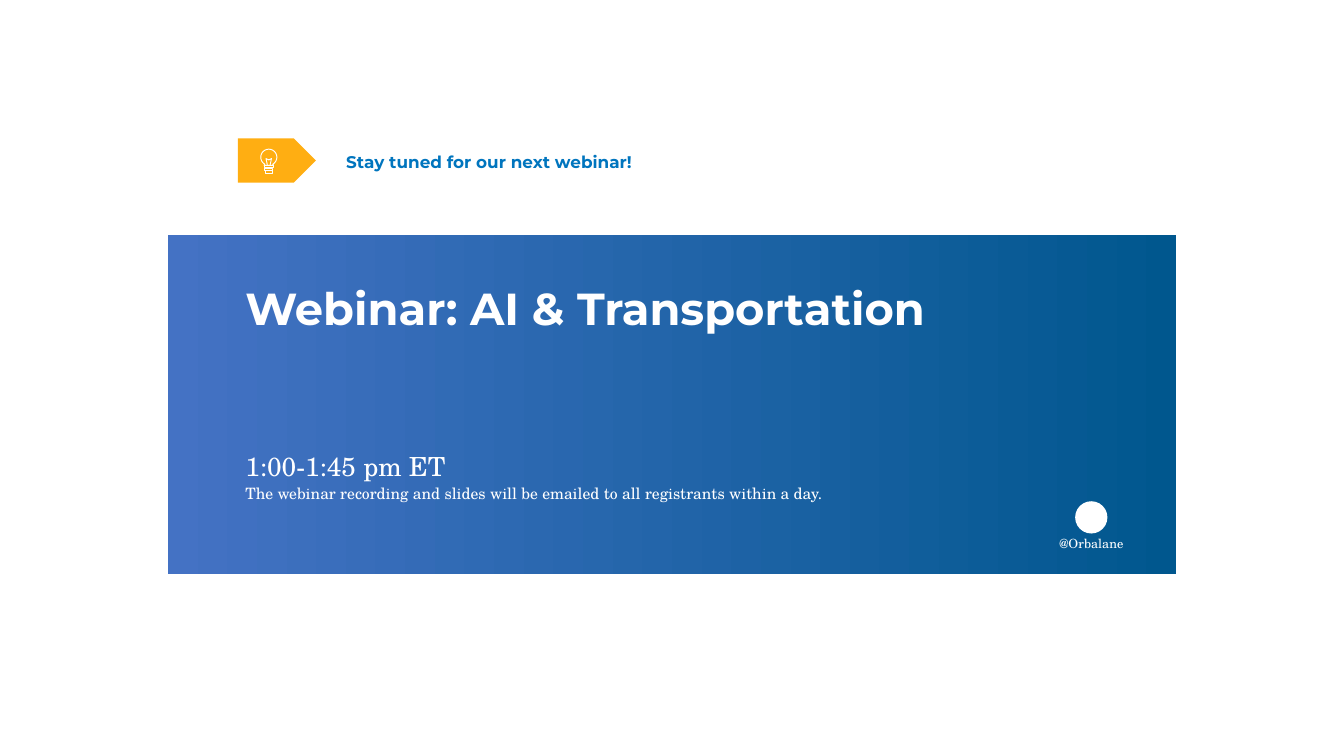
from math import cos, radians, sin

from pptx import Presentation
from pptx.dml.color import RGBColor
from pptx.enum.shapes import MSO_SHAPE
from pptx.enum.text import PP_ALIGN
from pptx.util import Inches, Pt

RECT, OVAL, TAG = MSO_SHAPE.RECTANGLE, MSO_SHAPE.OVAL, MSO_SHAPE.PENTAGON
LEFT, MID = PP_ALIGN.LEFT, PP_ALIGN.CENTER

COLORS = {"start": "4472C4", "end": "00578E", "tag": "FFAE12",
          "white": "FFFFFF", "blue": "0075BE"}
HEAD, BODY = "Montserrat", "TeX Gyre Schola"

# Content: box, alignment, line spacing, font, bold, colour, (text, size) lines
TEXTS = [
    ((1.77, 2.06, 6.23, 1.27), LEFT, 1, HEAD, True, "white",
     [("Webinar: AI & Transportation", 24)]),
    ((1.77, 3.29, 5.81, 0.48), LEFT, 1.13, BODY, False, "white",
     [("1:00-1:45 pm ET", 14.1),
      ("The webinar recording and slides will be emailed to all "
       "registrants within a day.", 8.4)]),
    ((7.72, 3.96, 0.8, 0.17), MID, 1, BODY, False, "white",
     [("@Orbalane", 6.8)]),
    ((2.52, 1.08, 2.29, 0.23), LEFT, 1.13, HEAD, True, "blue",
     [("Stay tuned for our next webinar!", 9)]),
]
PANEL = (1.25, 1.75, 7.5, 2.52)
BADGE = (8, 3.73, 0.24, 0.24)
ARROW = (1.77, 1.03, 0.58, 0.33)

# Light bulb: glass, filament and stacked base rings
BULB_X, BULB_Y, BULB_R = 2.0, 1.17, 0.06
NECK = 1.23
WIRE = [(-0.01, NECK), (-0.02, 1.18), (0, 1.19), (0.02, 1.18), (0.01, NECK)]
RINGS = [0.07, 0.06, 0.05]
STEP = 0.02

prs = Presentation()
prs.slide_width, prs.slide_height = Inches(10), Inches(10 * 9 / 16)
slide = prs.slides.add_slide(prs.slide_layouts[6])
shapes = slide.shapes


def rgb(name):
    return RGBColor.from_string(COLORS[name])


def add(kind, box, color):
    part = shapes.add_shape(kind, *map(Inches, box))
    part.shadow.inherit = False
    part.fill.solid()
    part.fill.fore_color.rgb = rgb(color)
    part.line.fill.background()
    return part


def trace(part):
    part.shadow.inherit = False
    part.fill.background()
    part.line.color.rgb = rgb("white")
    part.line.width = Pt(0.5)


def draw(points, close):
    first, *rest = [(Inches(x), Inches(y)) for x, y in points]
    path = shapes.build_freeform(*first)
    path.add_line_segments(rest, close=close)
    trace(path.convert_to_shape())


def write(box, align, space, font, bold, color, lines):
    frame = shapes.add_textbox(*map(Inches, box)).text_frame
    form = {"word_wrap": True,
            "margin_left": Pt(4), "margin_right": Pt(4),
            "margin_top": Pt(2), "margin_bottom": Pt(2)}
    for key, value in form.items():
        setattr(frame, key, value)
    for i, (text, size) in enumerate(lines):
        para = frame.add_paragraph() if i else frame.paragraphs[0]
        para.alignment, para.line_spacing = align, space
        run = para.add_run()
        run.text = text
        for key, value in {"name": font, "size": Pt(size), "bold": bold}.items():
            setattr(run.font, key, value)
        run.font.color.rgb = rgb(color)


# Gradient panel
panel = add(RECT, PANEL, "start")
panel.fill.gradient()
panel.fill.gradient_angle = 0
for stop, name, place in zip(panel.fill.gradient_stops, ("start", "end"), (0, 1)):
    stop.color.rgb = rgb(name)
    stop.position = place

# Round badge and yellow tag
add(OVAL, BADGE, "white")
add(TAG, ARROW, "tag")

# Light bulb
glass = [(BULB_X + BULB_R * cos(radians(a)), BULB_Y + BULB_R * sin(radians(a)))
         for a in range(120, 421, 15)]
half = RINGS[0] / 2
draw([(BULB_X - half, NECK), *glass, (BULB_X + half, NECK)], True)
draw([(BULB_X + x, y) for x, y in WIRE], False)
for i, wide in enumerate(RINGS):
    trace(add(RECT, (BULB_X - wide / 2, NECK + i * STEP, wide, STEP), "white"))

# Texts
for item in TEXTS:
    write(*item)

prs.save("out.pptx")
